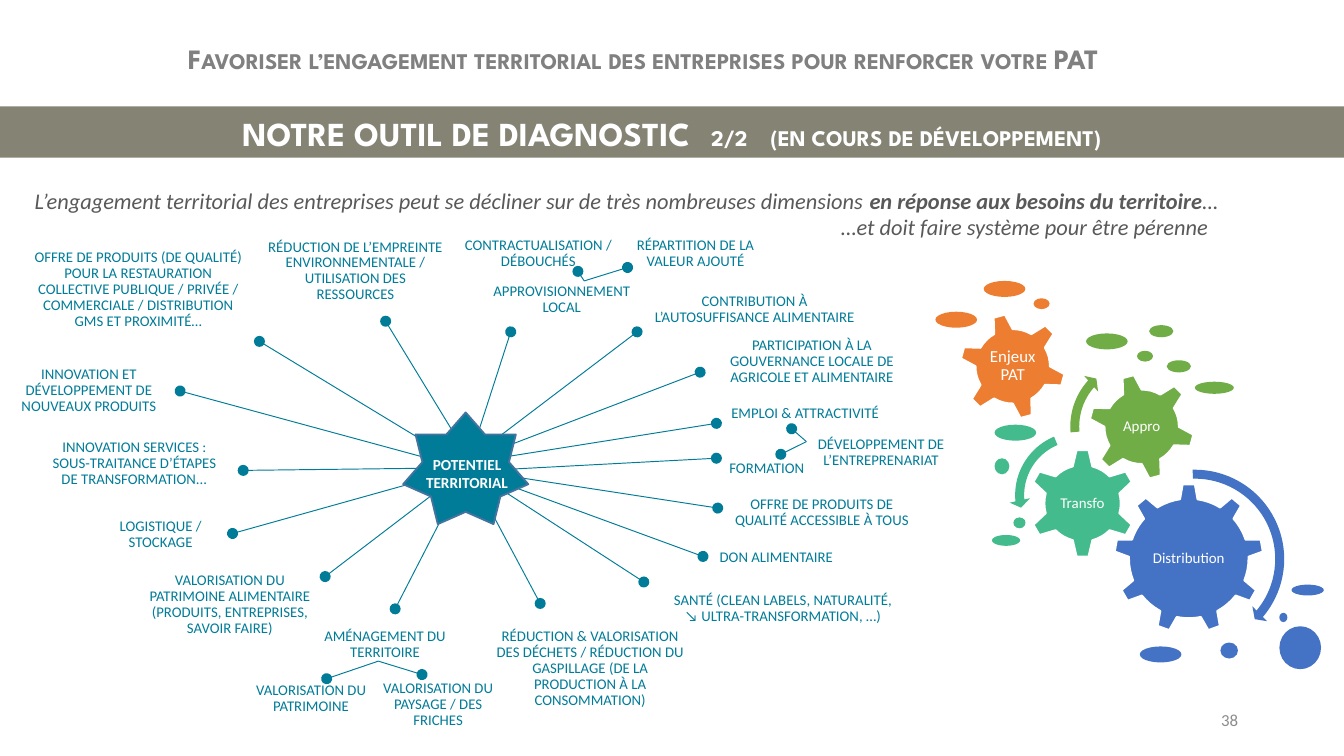
from lxml.etree import SubElement as Sub
from pptx import Presentation as Deck
from pptx.dml.color import RGBColor as Rgb
from pptx.enum.shapes import MSO_CONNECTOR as Link, MSO_SHAPE as Kind
from pptx.enum.text import MSO_ANCHOR as Anchor, PP_ALIGN as Align
from pptx.oxml.ns import qn
from pptx.util import Pt

TEAL, WHITE, GREY = "007C98", "FFFFFF", "595959"
ORANGE, LEAF, MINT, BLUE = "ED7D31", "70AD47", "43BB8D", "4472C4"
HUB = (250.6, 130.6)
SPAN = 78.5

SPOKES = [
    (384.5, 152.2, 262.1, 133.4), (206.6, 52.1, 251.3, 125.5),
    (375.1, 79.4, 262.1, 122.6), (376.6, 178.1, 252.7, 132.7),
    (96.5, 89.5, 239.8, 128.4), (273.6, 57.8, 250.6, 129.1),
    (341.3, 57.8, 254.9, 123.4), (383.8, 125.5, 248.4, 132.7),
    (383.8, 106.8, 247.7, 128.4), (139, 62.9, *HUB), (344.9, 191.8, *HUB),
    (289.4, 203.3, *HUB), (211.7, 206.2, *HUB), (174.2, 188.9, *HUB),
    (124.6, 165.8, *HUB), (130.3, 132, *HUB),
]
FORKS = [
    ((313, 30.5), (309.6, 25.4), (336.2, 23.3)),
    ((202.7, 234.2), (175, 243.6), (226.1, 241.4)),
    ((432, 116.6), (424.1, 109.7), (418.3, 123.4)),
]
LABELS = [
    ("OFFRE DE PRODUITS (DE QUALITÉ) POUR LA RESTAURATION COLLECTIVE PUBLIQUE / PRIVÉE / "
     "COMMERCIALE / DISTRIBUTION GMS ET PROXIMITÉ…", 15, 15.4, 118, 40),
    ("RÉDUCTION DE L’EMPREINTE ENVIRONNEMENTALE / UTILISATION DES RESSOURCES", 140.4, 5.3, 100, 40),
    ("CONTRACTUALISATION / DÉBOUCHÉS", 245.5, 3.8, 85.7, 24.5),
    ("RÉPARTITION DE LA VALEUR AJOUTÉ", 337.7, 3.8, 69.8, 24.5),
    ("APPROVISIONNEMENT LOCAL", 259.2, 20.4, 83.5, 40),
    ("CONTRIBUTION À L’AUTOSUFFISANCE ALIMENTAIRE", 343.4, 25.7, 121.7, 40),
    ("PARTICIPATION À LA GOUVERNANCE LOCALE DE AGRICOLE ET ALIMENTAIRE", 388.8, 53.8, 92.2, 40),
    ("EMPLOI & ATTRACTIVITÉ", 384.5, 81.6, 93.6, 40),
    ("DÉVELOPPEMENT DE L’ENTREPRENARIAT", 432.7, 102.5, SPAN, 40),
    ("FORMATION", 371.5, 111.1, SPAN, 40),
    ("OFFRE DE PRODUITS DE QUALITÉ ACCESSIBLE À TOUS", 386.6, 134.9, 107.3, 40),
    ("DON ALIMENTAIRE", 376.6, 158.6, SPAN, 40),
    ("SANTÉ (CLEAN LABELS, NATURALITÉ, ↘ ULTRA-TRANSFORMATION, …)", 356.4, 186, 126, 40),
    ("RÉDUCTION & VALORISATION DES DÉCHETS / RÉDUCTION DU GASPILLAGE "
     "(DE LA PRODUCTION À LA CONSOMMATION)", 261.4, 206.2, 109.4, 64),
    ("AMÉNAGEMENT DU TERRITOIRE", 167, 205.4, SPAN, 40),
    ("VALORISATION DU PATRIMOINE", 127.4, 234.2, SPAN, 40),
    ("VALORISATION DU PAYSAGE / DES FRICHES", 202.3, 237.8, 64.8, 40),
    ("VALORISATION DU PATRIMOINE ALIMENTAIRE (PRODUITS, ENTREPRISES, SAVOIR FAIRE)",
     71.3, 183.8, 103.7, 40),
    ("LOGISTIQUE / STOCKAGE", 46.8, 146.4, SPAN, 40),
    ("INNOVATION SERVICES : SOUS-TRAITANCE D’ÉTAPES DE TRANSFORMATION...", 21.6, 108.2, 100.8, 40),
    ("INNOVATION ET DÉVELOPPEMENT DE NOUVEAUX PRODUITS", 0, 69.4, 95.2, 40),
]
GEARS = [
    ("Distribution", Kind.GEAR_9, 96.9, 111.2, 80, 0, BLUE, 8),
    ("Transfo", Kind.GEAR_6, 50.8, 92.5, 58.3, 0, MINT, 8),
    ("Appro", Kind.GEAR_6, 83.2, 52.2, 56.9, 345, LEAF, 8),
    ("Enjeux PAT", Kind.GEAR_6, 14.1, 19.8, 56.9, 345, ORANGE, 9),
]
ARROWS = [
    (Kind.CIRCULAR_ARROW, 89, 100.4, 102.2, BLUE, (0.047, 2.99, 24.082, 161.173, 0.055)),
    (Kind.LEFT_CIRCULAR_ARROW, 40.7, 80.2, 74.2, MINT, (0.065, 4.3, 104.891, 148.378, 0.075)),
    (Kind.CIRCULAR_ARROW, 70.2, 40.6, 79.9, LEAF, (0.06, 3.941, 133.138, 105.082, 0.07)),
]
DROPS = {
    ORANGE: [(27, 2.5, 22.3, 8.6), (53.7, 11.8, 8.6, 5.8), (1.1, 19, 22.3, 8.6)],
    LEAF: [(81.8, 30.6, 22.3, 8.6), (109.1, 39.9, 8.6, 5.8), (115.6, 26.2, 13, 6.5),
           (125, 45, 13, 6.5), (140.1, 56.5, 20.9, 6.5)],
    MINT: [(32.8, 79.5, 22.3, 8.6), (32.8, 97.5, 7.9, 8.6), (42.9, 129.2, 6.5, 5.8),
           (31.4, 138.6, 15.1, 5.8)],
    BLUE: [(110.6, 198.3, 22.3, 8.6), (153.8, 196.2, 9.4, 8.6), (191.9, 165.2, 17.3, 5.8),
           (185.4, 180.3, 4.3, 5), (185.4, 187.5, 22.3, 23)],
}


def tint(hue):
    """Turn a hex string into a colour."""
    return Rgb.from_string(hue)


def put(item, **look):
    """Set each format value on the item."""
    for key, val in look.items():
        setattr(item, key, val)


def shape(slide, kind, box, hue, edge=None):
    """Add a flat filled shape, with a 1 pt edge if a colour is given."""
    form = slide.shapes.add_shape(kind, *map(Pt, box))
    form.shadow.inherit = False
    form.fill.solid()
    form.fill.fore_color.rgb = tint(hue)
    if edge:
        form.line.color.rgb = tint(edge)
        form.line.width = Pt(1)
    else:
        form.line.fill.background()
    return form


def write(para, words, hue, size, face="Calibri", **look):
    """Add one run of text to a paragraph."""
    run = para.add_run()
    run.text = words
    put(run.font, size=Pt(size), name=face, **look)
    run.font.color.rgb = tint(hue)
    return run


def frame(slide, box, pad=(7.2, 3.6), anchor=Anchor.MIDDLE, **look):
    """Add a wrapping text box and return its first paragraph."""
    body = slide.shapes.add_textbox(*map(Pt, box)).text_frame
    wide, high = map(Pt, pad)
    put(body, word_wrap=True, vertical_anchor=anchor, margin_left=wide,
        margin_right=wide, margin_top=high, margin_bottom=high)
    put(body.paragraphs[0], **look)
    return body.paragraphs[0]


def link(slide, start, end, tips):
    """Draw a thin line with round ends at the given tips."""
    line = slide.shapes.add_connector(Link.STRAIGHT, *map(Pt, (*start, *end)))
    line.line.color.rgb = tint(TEAL)
    line.line.width = Pt(0.5)
    for tip in tips:
        Sub(line.line._get_or_add_ln(), qn("a:" + tip), type="oval")
    Sub(line._element.spPr, qn("a:effectLst"))


def header(slide, x, y, w):
    """Place the running head, the title band and the introduction."""
    face = "League Spartan"
    head = write(frame(slide, (x + 93.6, y + 18.7, 529, 25), anchor=Anchor.TOP),
                 "Favoriser l’engagement territorial des entreprises pour renforcer votre PAT",
                 "808080", 15, face, bold=True)
    head._r.get_or_add_rPr().set("cap", "small")
    band = shape(slide, Kind.RECTANGLE, (x, y + 57, w, 27.4), "848374")
    band.text_frame.vertical_anchor = Anchor.MIDDLE
    para = band.text_frame.paragraphs[0]
    put(para, alignment=Align.CENTER, line_spacing=0.9)
    for words, size in (("NOTRE OUTIL DE DIAGNOSTIC ", 18), (" ", 24), ("2/2", 12)):
        write(para, words, WHITE, size, face, bold=True)
    gap = write(para, " ", WHITE, 12, face, bold=True)
    gap._r.get_or_add_rPr().set("spc", "900")
    write(para, "(EN COURS DE DÉVELOPPEMENT)", WHITE, 12, face, bold=True)
    para = frame(slide, (x + 11.5, y + 96.5, w - 18, 36), anchor=Anchor.TOP)
    for words, bold in (
            ("L’engagement territorial des entreprises peut se décliner sur de très "
             "nombreuses dimensions ", False),
            ("en réponse aux besoins du territoire", True), ("…", False)):
        write(para, words, GREY, 12, italic=True, bold=bold)
    last = para._parent.add_paragraph()
    last._p.get_or_add_pPr().set("marL", str(Pt(432)))
    write(last, "…et doit faire système pour être pérenne", GREY, 12, italic=True)


def web(slide, x, y):
    """Place the hub, its spokes, forks and labels."""
    for ex, ey, sx, sy in SPOKES:
        link(slide, (x + sx, y + sy), (x + ex, y + ey), ("headEnd", "tailEnd"))
    for (kx, ky), *ends in FORKS:
        for ex, ey in ends:
            link(slide, (x + kx, y + ky), (x + ex, y + ey), ("tailEnd",))
    for words, left, top, w, h in LABELS:
        para = frame(slide, (x + left, y + top, w, h), (2, 2),
                     alignment=Align.CENTER, line_spacing=0.9)
        write(para, words, TEAL, 7.9)
    shape(slide, Kind.STAR_7_POINT, (x + 216, y + 101, 67, 59.8), TEAL, "43739E")
    para = frame(slide, (x + 220.3, y + 119.8, 59.8, 27.4), (3, 0), alignment=Align.CENTER)
    write(para, "POTENTIEL TERRITORIAL", WHITE, 8.2, bold=True)


def train(slide, x, y):
    """Place the gears, their arrows and the drops around them."""
    for words, kind, left, top, side, turn, hue, size in GEARS:
        gear = shape(slide, kind, (x + left, y + top, side, side), hue, WHITE)
        gear.rotation = turn
        core, inset = side * 0.56, side * 0.22
        para = frame(slide, (x + left + inset, y + top + inset, core, core), (0.7, 0.7),
                     alignment=Align.CENTER, line_spacing=0.9)
        write(para, words, WHITE, size)
    for kind, left, top, side, hue, bends in ARROWS:
        arrow = shape(slide, kind, (x + left, y + top, side, side), hue)
        for i, bend in enumerate(bends):
            arrow.adjustments[i] = bend
    for hue, spots in DROPS.items():
        for left, top, w, h in spots:
            shape(slide, Kind.OVAL, (x + left, y + top, w, h), hue)


def main():
    """Build the slide and save it."""
    deck = Deck()
    put(deck, slide_width=Pt(720), slide_height=Pt(405))
    slide = deck.slides.add_slide(deck.slide_layouts[6])
    header(slide, 0, 0, 720)
    train(slide, 500, 148)
    web(slide, 0, 120)
    write(frame(slide, (508.3, 375, 162, 21.6), alignment=Align.RIGHT), "38", "8C8C8C", 9)
    deck.save("out.pptx")


if __name__ == "__main__":
    main()
